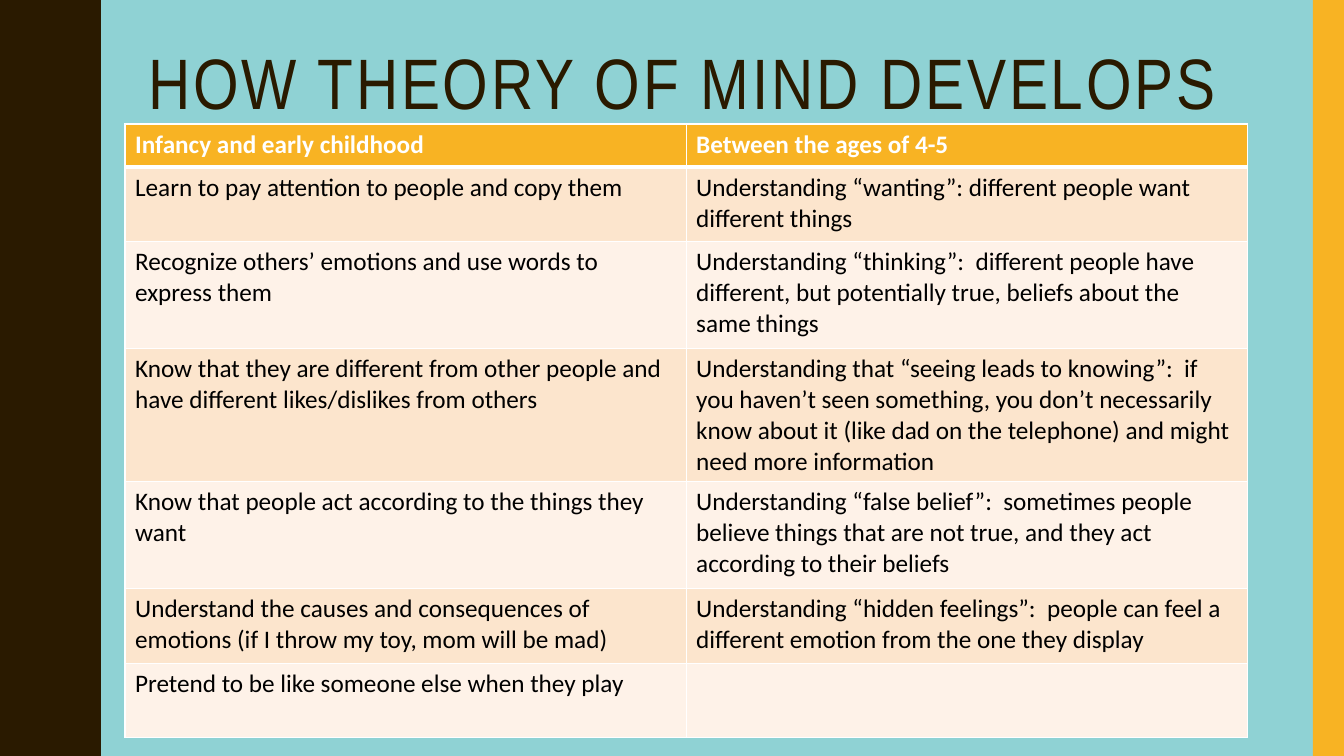
"""Build a slide with a two-column table on how theory of mind develops."""
from dataclasses import dataclass

import pptx
import pptx.dml.color
import pptx.enum.shapes
import pptx.enum.text
import pptx.oxml
import pptx.oxml.ns
import pptx.util

Inches = pptx.util.Inches
Pt = pptx.util.Pt

COLORS = {
    "sky": "8FD2D4",
    "brown": "2A1A00",
    "gold": "F8B323",
    "peach": "FCE5CD",
    "cream": "FEF2E8",
    "white": "FFFFFF",
    "black": "000000",
}
WIDTH, HEIGHT = 13.33, 7.5
WAVE_PERIOD = 1.5
HALF_WAVE = [
    (0.78, 0), (0.78, 0.07), (0.79, 0.14), (0.8, 0.2), (0.81, 0.25),
    (0.83, 0.29), (0.85, 0.33), (0.87, 0.38), (0.89, 0.42), (0.91, 0.46),
    (0.93, 0.5), (0.95, 0.55), (0.96, 0.61), (0.97, 0.68), (0.97, 0.75),
]


@dataclass
class Row:
    """One table row: its height in inches and its two texts."""
    height: float
    early: str
    later: str


ROWS = [
    Row(0.43, "Infancy and early childhood", "Between the ages of 4-5"),
    Row(0.74, "Learn to pay attention to people and copy them",
        "Understanding “wanting”: different people want different things"),
    Row(1.06, "Recognize others’ emotions and use words to express them",
        "Understanding “thinking”:  different people have different, "
        "but potentially true, beliefs about the same things"),
    Row(1.32, "Know that they are different from other people and have "
        "different likes/dislikes from others",
        "Understanding that “seeing leads to knowing”:  if you haven’t seen "
        "something, you don’t necessarily know about it (like dad on the "
        "telephone) and might need more information"),
    Row(1.06, "Know that people act according to the things they want",
        "Understanding “false belief”:  sometimes people believe things that "
        "are not true, and they act according to their beliefs"),
    Row(0.74, "Understand the causes and consequences of emotions "
        "(if I throw my toy, mom will be mad)",
        "Understanding “hidden feelings”:  people can feel a different "
        "emotion from the one they display"),
    Row(0.74, "Pretend to be like someone else when they play", ""),
]


def rgb(name: str) -> pptx.dml.color.RGBColor:
    """Return the named colour."""
    return pptx.dml.color.RGBColor.from_string(COLORS[name])


def paint(sp, color: str) -> None:
    """Fill a shape and remove its outline and shadow."""
    sp.fill.solid()
    sp.fill.fore_color.rgb = rgb(color)
    sp.line.fill.background()
    sp.shadow.inherit = False


def write(tf, text: str, *, font: str, size: float, color: str,
          bold: bool = False, tracking: float = 0, spacing: float = 1) -> None:
    """Write one left-aligned paragraph in a text frame."""
    p = tf.paragraphs[0]
    p.alignment = pptx.enum.text.PP_ALIGN.LEFT
    p.line_spacing = spacing
    r = p.add_run()
    r.text = text
    r.font.name = font
    r.font.size = Pt(size)
    r.font.bold = bold
    r.font.color.rgb = rgb(color)
    if tracking:
        r.font._element.set("spc", str(int(tracking * 100)))


def add_wave(s) -> None:
    """Draw the wavy band on the left edge."""
    wave = HALF_WAVE + [(x, WAVE_PERIOD - y) for x, y in HALF_WAVE[-2::-1]]
    edge = [(x, y + i * WAVE_PERIOD)
            for i in range(int(HEIGHT / WAVE_PERIOD)) for x, y in wave]
    fb = s.shapes.build_freeform(0, 0, scale=Inches(1))
    fb.add_line_segments(edge + [(0, HEIGHT)], close=True)
    paint(fb.convert_to_shape(), "brown")


def add_bar(s) -> None:
    """Draw the gold bar on the right edge."""
    sp = s.shapes.add_shape(pptx.enum.shapes.MSO_SHAPE.RECTANGLE,
                            Inches(13.02), 0, Inches(0.31), Inches(HEIGHT))
    paint(sp, "gold")


def add_title(s, text: str) -> None:
    """Place and format the title."""
    sp = s.shapes.title
    sp.left, sp.top = Inches(1.37), Inches(0.42)
    sp.width, sp.height = Inches(11.13), Inches(1.63)
    tf = sp.text_frame
    tf.word_wrap = True
    tf.auto_size = pptx.enum.text.MSO_AUTO_SIZE.NONE
    tf.vertical_anchor = pptx.enum.text.MSO_ANCHOR.TOP
    write(tf, text, font="Arial Narrow", size=51, color="brown",
          tracking=2, spacing=0.9)


def set_borders(cell, **widths: float) -> None:
    """Give a cell white borders with widths in points, keyed L, R, T, B."""
    tcPr = cell._tc.get_or_add_tcPr()
    for side, width in widths.items():
        tcPr.append(pptx.oxml.parse_xml(
            f'<a:ln{side} {pptx.oxml.ns.nsdecls("a")} w="{Pt(width)}">'
            f'<a:solidFill><a:srgbClr val="{COLORS["white"]}"/></a:solidFill>'
            f'</a:ln{side}>'))


def add_table(s, rows: list[Row]) -> None:
    """Draw the table with a gold header and banded rows."""
    height = sum(row.height for row in rows)
    tbl = s.shapes.add_table(len(rows), 2, Inches(1.24), Inches(1.23),
                             Inches(11.13), Inches(height)).table
    for i, row in enumerate(rows):
        tbl.rows[i].height = Inches(row.height)
        head = i == 0
        fill = "gold" if head else ("cream", "peach")[i % 2]
        for j, text in enumerate((row.early, row.later)):
            cell = tbl.cell(i, j)
            set_borders(cell, L=1, R=1, T=3 if i == 1 else 1, B=3 if head else 1)
            cell.fill.solid()
            cell.fill.fore_color.rgb = rgb(fill)
            if text:
                write(cell.text_frame, text, font="Calibri", size=18,
                      color="white" if head else "black", bold=head)


def main() -> None:
    """Build and save the presentation."""
    prs = pptx.Presentation()
    prs.slide_width, prs.slide_height = Inches(WIDTH), Inches(HEIGHT)
    s = prs.slides.add_slide(prs.slide_layouts.get_by_name("Title Only"))
    s.background.fill.solid()
    s.background.fill.fore_color.rgb = rgb("sky")
    add_wave(s)
    add_bar(s)
    add_title(s, "HOW THEORY OF MIND DEVELOPS")
    add_table(s, ROWS)
    prs.save("out.pptx")


if __name__ == "__main__":
    main()
